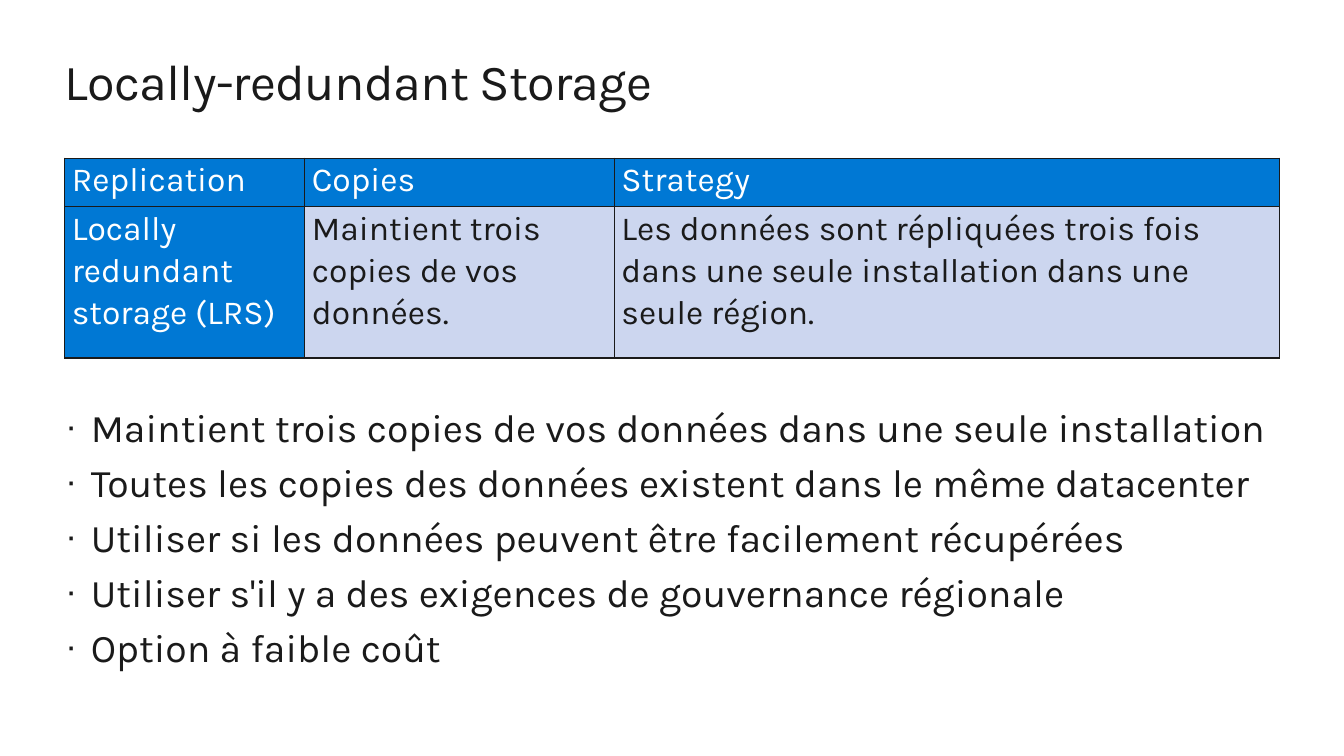
from lxml import etree
from pptx import Presentation
from pptx.dml.color import RGBColor
from pptx.enum.text import MSO_ANCHOR, MSO_AUTO_SIZE, PP_ALIGN
from pptx.oxml.ns import qn
from pptx.util import Cm, Pt

TOP = MSO_ANCHOR.TOP
GROW = MSO_AUTO_SIZE.SHAPE_TO_FIT_TEXT
LEFT = PP_ALIGN.LEFT

FONT = "Karla"
COLOURS = {"ink": "1A1A1A", "white": "FFFFFF", "blue": "0078D4", "pale": "CCD6EF"}

TITLE = "Locally-redundant Storage"
TABLE_ROWS = [
    ["Replication", "Copies", "Strategy"],
    [
        "Locally redundant storage (LRS)",
        "Maintient trois copies de vos données.",
        "Les données sont répliquées trois fois dans une seule installation "
        "dans une seule région.",
    ],
]
COLUMN_WIDTHS = [6.05, 7.8, 16.76]
ROW_HEIGHTS = [1.22, 3.81]
BULLETS = [
    "Maintient trois copies de vos données dans une seule installation",
    "Toutes les copies des données existent dans le même datacenter",
    "Utiliser si les données peuvent être facilement récupérées",
    "Utiliser s'il y a des exigences de gouvernance régionale",
    "Option à faible coût",
]


def colour(name):
    return RGBColor.from_string(COLOURS[name])


def format_runs(paragraph, size, colour_name):
    paragraph.alignment = LEFT
    for run in paragraph.runs:
        run.font.name = FONT
        run.font.size = Pt(size)
        run.font.color.rgb = colour(colour_name)


def place_placeholder(shape, left, top, width, height):
    """Move a placeholder and give its text frame no margins."""
    shape.left, shape.top = Cm(left), Cm(top)
    shape.width, shape.height = Cm(width), Cm(height)
    frame = shape.text_frame
    frame.margin_left = frame.margin_right = 0
    frame.margin_top = frame.margin_bottom = 0
    frame.vertical_anchor = TOP
    frame.word_wrap = True
    frame.auto_size = GROW
    return frame


def fill_title(shape):
    frame = place_placeholder(shape, 1.63, 1.27, 30.61, 1.55)
    frame.text = TITLE
    paragraph = frame.paragraphs[0]
    format_runs(paragraph, 36, "ink")
    paragraph.runs[0].font._element.set("spc", "-50")


def set_bullet(paragraph):
    properties = paragraph._p.get_or_add_pPr()
    properties.set("marL", str(Cm(0.64)))
    properties.set("indent", str(-Cm(0.64)))
    etree.SubElement(properties, qn("a:buSzPct"), val="90000")
    etree.SubElement(properties, qn("a:buChar"), char="·")


def fill_list(shape):
    frame = place_placeholder(shape, 1.65, 10.16, 30.61, 6.93)
    frame.text = "\n".join(BULLETS)
    for paragraph in frame.paragraphs:
        format_runs(paragraph, 28, "ink")
        set_bullet(paragraph)


def set_borders(cell):
    """Draw a thin dark line on all four sides of a cell."""
    properties = cell._tc.get_or_add_tcPr()
    for index, side in enumerate(("a:lnL", "a:lnR", "a:lnT", "a:lnB")):
        line = etree.Element(qn(side), w=str(Pt(1)))
        fill = etree.SubElement(line, qn("a:solidFill"))
        etree.SubElement(fill, qn("a:srgbClr"), val=COLOURS["ink"])
        properties.insert(index, line)


def fill_cell(cell, text, is_header):
    cell.text = text
    cell.margin_left = cell.margin_right = Cm(0.18)
    cell.margin_top = cell.margin_bottom = 0
    cell.vertical_anchor = TOP
    cell.fill.solid()
    cell.fill.fore_color.rgb = colour("blue" if is_header else "pale")
    paragraph = cell.text_frame.paragraphs[0]
    paragraph.line_spacing = 1.07
    format_runs(paragraph, 24, "white" if is_header else "ink")
    set_borders(cell)


def add_replication_table(slide):
    table = slide.shapes.add_table(
        len(ROW_HEIGHTS), len(COLUMN_WIDTHS), Cm(1.63), Cm(3.99),
        Cm(sum(COLUMN_WIDTHS)), Cm(sum(ROW_HEIGHTS)),
    ).table
    table.horz_banding = False
    table.first_row = False
    for column, width in zip(table.columns, COLUMN_WIDTHS):
        column.width = Cm(width)
    for row, height in zip(table.rows, ROW_HEIGHTS):
        row.height = Cm(height)
    for row_index, texts in enumerate(TABLE_ROWS):
        for column_index, text in enumerate(texts):
            is_header = row_index == 0 or column_index == 0
            fill_cell(table.cell(row_index, column_index), text, is_header)


def main():
    presentation = Presentation()
    presentation.slide_width = Cm(33.87)
    presentation.slide_height = Cm(19.05)
    slide = presentation.slides.add_slide(presentation.slide_layouts[1])

    # Title and list
    fill_title(slide.shapes.title)
    fill_list(slide.placeholders[1])

    # Replication table
    add_replication_table(slide)

    presentation.save("out.pptx")


if __name__ == "__main__":
    main()
